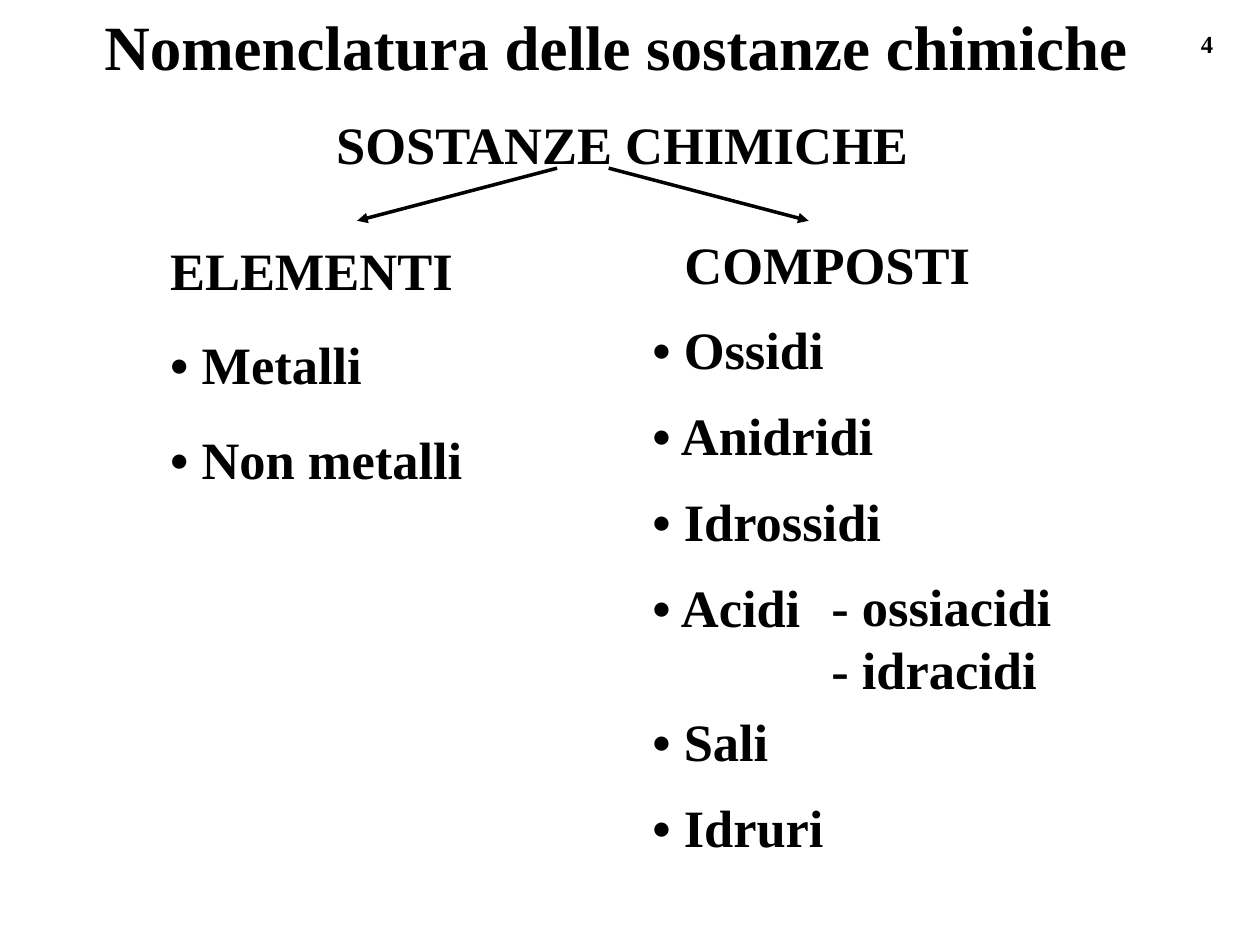
from pptx import Presentation
from pptx.dml.color import RGBColor
from pptx.enum.shapes import MSO_CONNECTOR as Connector
from pptx.enum.text import MSO_AUTO_SIZE as AutoSize, PP_ALIGN as Align
from pptx.oxml.ns import qn
from pptx.util import Cm, Pt
from lxml.etree import SubElement

BLACK = RGBColor(0x00, 0x00, 0x00)
FONT = "Times New Roman"


def write(box, text, size=30, align=Align.LEFT, wrap=True, margin=0.1):
    """Put one bold paragraph in a box; margin is the left margin in cm."""
    frame = box.text_frame
    frame.word_wrap = wrap
    frame.auto_size = AutoSize.SHAPE_TO_FIT_TEXT
    frame.margin_left = frame.margin_right = Cm(0.15)
    frame.margin_top = frame.margin_bottom = Cm(0.15)
    para = frame.paragraphs[0]
    para.alignment = align
    properties = para._p.get_or_add_pPr()
    properties.set("marL", str(Cm(margin)))
    properties.set("indent", "0")
    span = para.add_run()
    span.text = text
    span.font.name = FONT
    span.font.size = Pt(size)
    span.font.bold = True
    span.font.color.rgb = BLACK


class Painter:
    def __init__(self, page, color=BLACK, line_width=2):
        self.page = page
        self.color = color
        self.line_width = line_width

    def label(self, text, left, top, width, height=1.63, **style):
        box = self.page.shapes.add_textbox(
            Cm(left), Cm(top), Cm(width), Cm(height))
        write(box, text, **style)

    def column(self, entries, left, top, step):
        """Stack (text, width, align) entries at an equal pitch."""
        for row, (text, width, align) in enumerate(entries):
            self.label(text, left, top + row * step, width, align=align)

    def arrow(self, tip, end):
        """Draw a line whose arrowhead sits at the tip."""
        line = self.page.shapes.add_connector(
            Connector.STRAIGHT, *(Cm(value) for value in tip + end))
        line.line.color.rgb = self.color
        line.line.width = Pt(self.line_width)
        SubElement(line.line._get_or_add_ln(), qn("a:headEnd"), type="triangle")
        SubElement(line._element.spPr, qn("a:effectLst"))


def main():
    deck = Presentation()
    deck.slide_width, deck.slide_height = Cm(25.4), Cm(19.05)
    page = deck.slides.add_slide(deck.slide_layouts[6])
    painter = Painter(page)

    # Page number, title and root of the tree
    painter.label("4", 23.93, 0.43, 0.81, 0.97, size=14,
                  align=Align.CENTER, wrap=False, margin=0)
    painter.label("Nomenclatura delle sostanze chimiche", 0.84, 0, 23.06, 1.8,
                  size=36, align=Align.CENTER)
    painter.label("SOSTANZE CHIMICHE", 1.7, 2.11, 21.59, align=Align.CENTER)

    # Elements
    painter.column([("ELEMENTI", 6.9, Align.LEFT),
                    ("• Metalli", 6.15, Align.LEFT),
                    ("• Non metalli", 7.2, Align.LEFT)],
                   left=3.18, top=4.65, step=1.9)

    # Compounds, with a gap after the acids for their second kind
    compounds_left, compounds_step = 12.9, 1.73
    painter.column([("COMPOSTI", 7.46, Align.CENTER),
                    ("• Ossidi", 6.15, Align.LEFT),
                    ("• Anidridi", 7.2, Align.LEFT),
                    ("• Idrossidi", 7.2, Align.LEFT),
                    ("• Acidi", 4.24, Align.LEFT)],
                   compounds_left, 4.52, compounds_step)
    painter.column([("• Sali", 7.2, Align.LEFT),
                    ("• Idruri", 7.2, Align.LEFT)],
                   compounds_left, 14.15, compounds_step)

    # Kinds of acid
    painter.column([("- ossiacidi", 5.92, Align.LEFT),
                    ("- idracidi", 5.92, Align.LEFT)],
                   left=16.51, top=11.43, step=1.27)

    # Branches
    painter.arrow(tip=(7.2, 4.45), end=(11.23, 3.39))
    painter.arrow(tip=(16.3, 4.45), end=(12.27, 3.39))

    deck.save("out.pptx")


if __name__ == "__main__":
    main()
